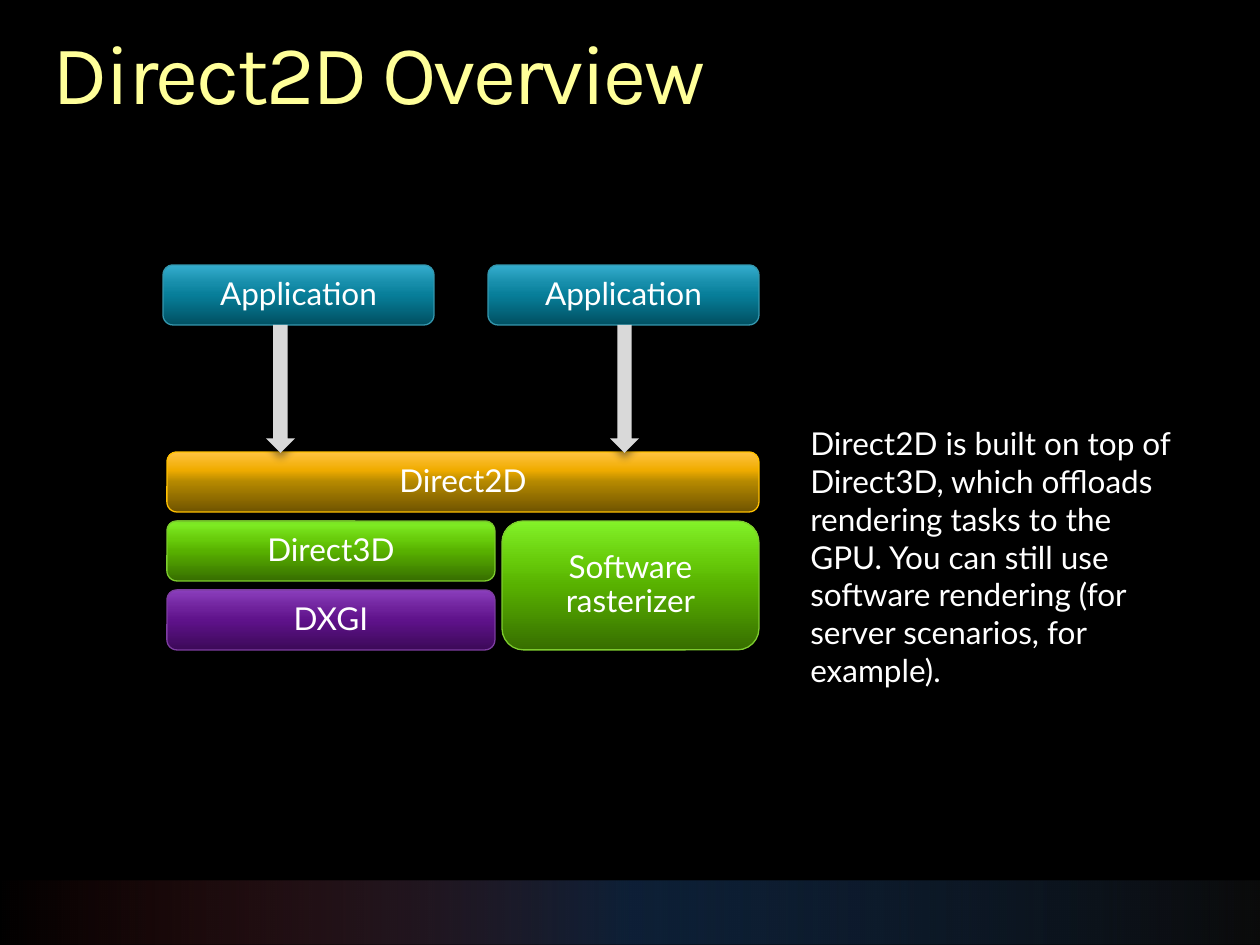
from lxml import etree
from pptx import Presentation
from pptx import util as u
from pptx.dml.color import RGBColor
from pptx.enum import shapes, text
from pptx.oxml.ns import qn

PX = 914400 // 126
WHITE, ARROW_GRAY = "FFFFFF", "D9D9D9"

# Content
TITLE = "Direct2D Overview"
NOTE = ("Direct2D is built on top of Direct3D, which offloads rendering tasks "
        "to the GPU. You can still use software rendering (for server "
        "scenarios, for example).")

# Theme of a box: gradient colours from bottom to top, then the outline
THEMES = {
    "blue": (("015062", "077E99", "178EAB", "35ADCE"), "3497AE"),
    "gold": (("705400", "B48800", "F0AC00", "FFC342"), "FFC000"),
    "green": (("376E00", "58B100", "68CC0B", "83F229"), "7DCC2E"),
    "purple": (("3C0958", "5F128B", "6F229C", "8B3FBD"), "7D3DA1"),
}
BOX_STOPS = (0, 50, 70, 100)
TITLE_STOPS = ((0, "FFFFB9", 100), (36, "FFFF99", 100), (86, "F6AE1E", 100))
FOOTER_STOPS = ((0, "0D0D0D", 86), (50, "17375E", 58), (100, "CE3B37", 0))

# Layout in px
ROW_H, ROW_STEP = 60, 69
STACK_X, STACK_Y, STACK_W, LEFT_W, GAP = 167, 452, 592, 328, 7
APP_X, APP_Y, APP_W, APP_STEP = 163, 265, 271, 325
ARROW_W, ARROW_XS = 29, (266, 610)
row_ys = [STACK_Y + i * ROW_STEP for i in range(3)]
right_x = STACK_X + LEFT_W + GAP
right_w = STACK_W - LEFT_W - GAP

# label, theme, left, top, width, height
BOXES = [
    ("Direct3D", "green", STACK_X, row_ys[1], LEFT_W, ROW_H),
    ("DXGI", "purple", STACK_X, row_ys[2], LEFT_W, ROW_H),
    ("Direct2D", "gold", STACK_X, row_ys[0], STACK_W, ROW_H),
    *[("Application", "blue", APP_X + i * APP_STEP, APP_Y, APP_W, ROW_H)
      for i in range(2)],
    ("Software rasterizer", "green", right_x, row_ys[1], right_w, ROW_STEP + ROW_H),
]


def color(value):
    return RGBColor.from_string(value)


def px(*lengths):
    return [length * PX for length in lengths]


def add_color(parent, value, opacity):
    rgb = etree.SubElement(parent, qn("a:srgbClr"), val=value)
    if opacity < 100:
        etree.SubElement(rgb, qn("a:alpha"), val=str(opacity * 1000))


def insert_gradient(parent, index, stops, angle):
    gradient = etree.Element(qn("a:gradFill"), rotWithShape="1")
    stop_list = etree.SubElement(gradient, qn("a:gsLst"))
    for position, value, opacity in stops:
        stop = etree.SubElement(stop_list, qn("a:gs"), pos=str(position * 1000))
        add_color(stop, value, opacity)
    etree.SubElement(gradient, qn("a:lin"), ang=str(angle * 60000), scaled="0")
    parent.insert(index, gradient)


def add_shadow(shape, opacity, blur, distance):
    effects = shape._element.spPr.find(qn("a:effectLst"))
    shadow = etree.SubElement(
        effects, qn("a:outerShdw"), blurRad=str(u.Pt(blur)),
        dist=str(u.Pt(distance)), dir=str(90 * 60000), rotWithShape="0")
    add_color(shadow, "000000", opacity)


def add_shape(slide, kind, place, stops=None, angle=0, fill=None, line=None):
    shape = slide.shapes.add_shape(kind, *px(*place))
    if stops:
        insert_gradient(shape._element.spPr, 2, stops, angle)  # after the geometry
    else:
        shape.fill.solid()
        shape.fill.fore_color.rgb = color(fill)
    if line:
        shape.line.color.rgb = color(line)
        shape.line.width = u.Pt(0.75)
    else:
        shape.line.fill.background()
    shape.shadow.inherit = False
    return shape


def write(frame, words, size, font, align, spacing=None):
    frame.word_wrap = True
    paragraph = frame.paragraphs[0]
    paragraph.alignment = align
    if spacing:
        paragraph.line_spacing = spacing
    run = paragraph.add_run()
    run.text = words
    run.font.size = u.Pt(size)
    run.font.name = font
    return run


def main():
    deck = Presentation()
    deck.slide_width, deck.slide_height = u.Inches(10), u.Inches(7.5)
    slide = deck.slides.add_slide(deck.slide_layouts[5])
    slide.background.fill.solid()
    slide.background.fill.fore_color.rgb = color("000000")

    # Footer band
    add_shape(slide, shapes.MSO_SHAPE.RECTANGLE, (0, 881, 1260, 64), FOOTER_STOPS, 180)

    # Title
    title = slide.shapes.title
    title.left, title.top, title.width, title.height = px(53, 32, 1155, 92)
    frame = title.text_frame
    frame.margin_left = frame.margin_right = frame.margin_top = frame.margin_bottom = 0
    frame.vertical_anchor = text.MSO_ANCHOR.TOP
    frame.auto_size = text.MSO_AUTO_SIZE.SHAPE_TO_FIT_TEXT
    run = write(frame, TITLE, 48, "Karla", text.PP_ALIGN.LEFT, 0.9)
    properties = run.font._element
    properties.set("spc", "-150")
    insert_gradient(properties, 0, TITLE_STOPS, 90)

    # Layered boxes
    for label, theme, *place in BOXES:
        shades, outline = THEMES[theme]
        stops = [(at, shade, 100) for at, shade in zip(BOX_STOPS, shades)]
        box = add_shape(slide, shapes.MSO_SHAPE.ROUNDED_RECTANGLE, place,
                        stops, 270, line=outline)
        add_shadow(box, 35, 4, 3)
        frame = box.text_frame
        frame.margin_left = frame.margin_right = u.Inches(0.08)
        frame.margin_top = frame.margin_bottom = u.Inches(0.04)
        frame.vertical_anchor = text.MSO_ANCHOR.MIDDLE
        run = write(frame, label, 18, "Lato", text.PP_ALIGN.CENTER, 0.9)
        run.font.color.rgb = color(WHITE)

    # Explanation
    note = slide.shapes.add_textbox(*px(798, 418, 394, 280))
    run = write(note.text_frame, NOTE, 18, "Lato", text.PP_ALIGN.LEFT)
    run.font.color.rgb = color(WHITE)
    note.text_frame.auto_size = text.MSO_AUTO_SIZE.SHAPE_TO_FIT_TEXT

    # Block arrows from the applications to Direct2D
    arrow_y = APP_Y + ROW_H
    for x in ARROW_XS:
        place = (x, arrow_y, ARROW_W, STACK_Y + 1 - arrow_y)
        arrow = add_shape(slide, shapes.MSO_SHAPE.DOWN_ARROW, place, fill=ARROW_GRAY)
        add_shadow(arrow, 45, 5, 3)

    deck.save("out.pptx")


if __name__ == "__main__":
    main()
